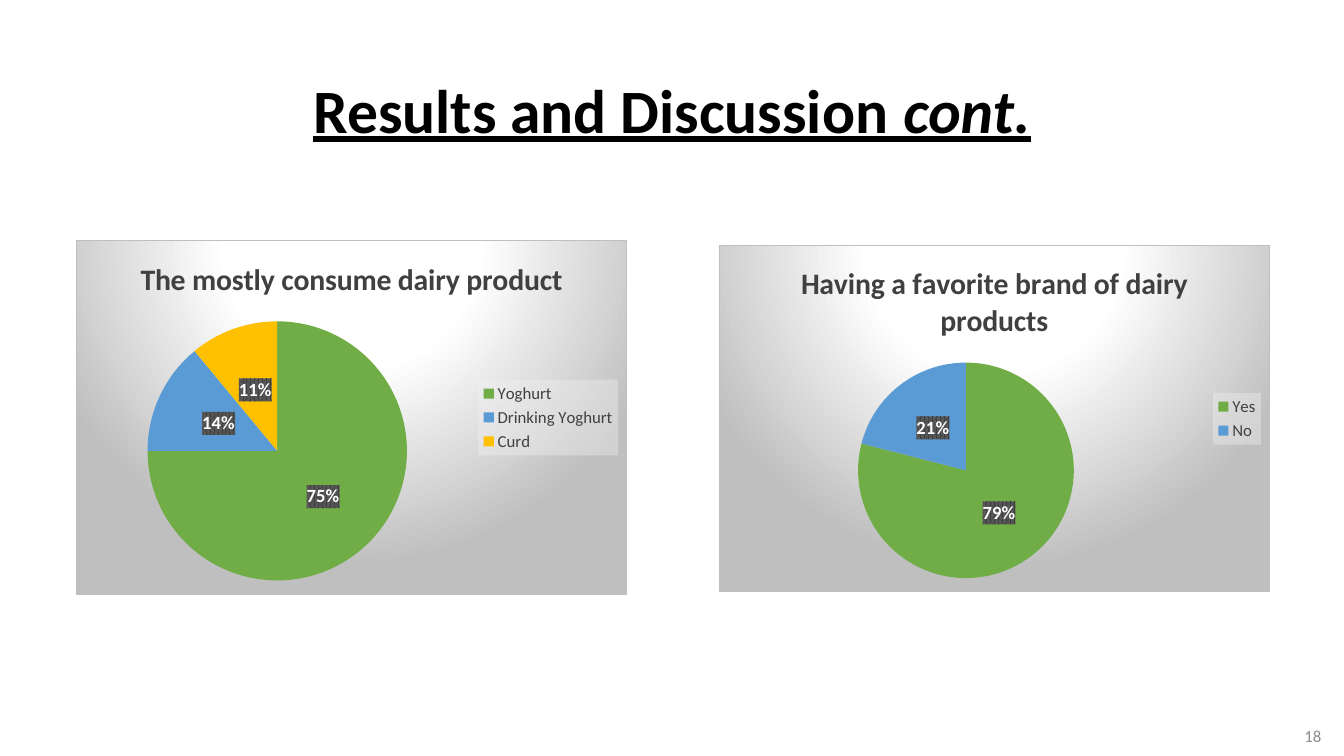
import pptx
import pptx.chart.data
import pptx.dml.color
import pptx.enum.chart
import pptx.enum.text
import pptx.oxml
import pptx.oxml.ns
import pptx.util

Cm = pptx.util.Cm
Pt = pptx.util.Pt
RGBColor = pptx.dml.color.RGBColor

HEADING = [("Results and Discussion ", False), ("cont.", True)]
PAGE_NUMBER = "18"
SURVEYS = [
    {
        "title": "The mostly consume dairy product",
        "answers": {"Yoghurt": 75, "Drinking Yoghurt": 14, "Curd": 11},
        "place": (1.91, 6.05, 13.89, 8.94),
    },
    {
        "title": "Having a favorite brand of dairy products",
        "answers": {"Yes": 79, "No": 21},
        "place": (18.11, 6.17, 13.89, 8.76),
    },
]

FONT = "Calibri"
BLACK = RGBColor(0x00, 0x00, 0x00)
WHITE = RGBColor(0xFF, 0xFF, 0xFF)
DARK_GRAY = RGBColor(0x40, 0x40, 0x40)
MID_GRAY = RGBColor(0x59, 0x59, 0x59)
PAGE_GRAY = RGBColor(0x8C, 0x8C, 0x8C)
EDGE_GRAY = RGBColor(0xBF, 0xBF, 0xBF)
PALE_GRAY = RGBColor(0xF2, 0xF2, 0xF2)
SLICE_COLORS = [
    RGBColor(0x70, 0xAD, 0x47),
    RGBColor(0x5B, 0x9B, 0xD5),
    RGBColor(0xFF, 0xC0, 0x00),
]

GRADIENT_STOPS = [(0, WHITE), (39000, WHITE), (100000, EDGE_GRAY)]
BACKDROP = (
    '<a:gradFill><a:gsLst>'
    + "".join(
        f'<a:gs pos="{position}"><a:srgbClr val="{color}"/></a:gs>'
        for position, color in GRADIENT_STOPS
    )
    + '</a:gsLst><a:path path="circle">'
    '<a:fillToRect l="50000" t="-80000" r="50000" b="180000"/></a:path></a:gradFill>'
    f'<a:ln w="9525"><a:solidFill><a:srgbClr val="{EDGE_GRAY}"/></a:solidFill></a:ln>'
)
LABEL_FILL = (
    f'<a:pattFill prst="pct75"><a:fgClr><a:srgbClr val="{DARK_GRAY}"/></a:fgClr>'
    f'<a:bgClr><a:srgbClr val="{MID_GRAY}"/></a:bgClr></a:pattFill>'
)
LEGEND_FILL = (
    f'<a:solidFill><a:srgbClr val="{PALE_GRAY}">'
    '<a:alpha val="39000"/></a:srgbClr></a:solidFill>'
)


def set_font(font, size, color, bold=None):
    font.name = FONT
    font.size = Pt(size)
    font.color.rgb = color
    font.bold = bold


def add_background(parent, content):
    properties = pptx.oxml.parse_xml(
        f'<c:spPr {pptx.oxml.ns.nsdecls("c", "a")}>{content}</c:spPr>'
    )
    parent.find(pptx.oxml.ns.qn("c:txPr")).addprevious(properties)


def add_heading(slide):
    title = slide.shapes.title
    title.left, title.top, title.width, title.height = map(Cm, (2.33, 1.01, 29.21, 3.68))
    title.text_frame.vertical_anchor = pptx.enum.text.MSO_ANCHOR.MIDDLE
    paragraph = title.text_frame.paragraphs[0]
    paragraph.alignment = pptx.enum.text.PP_ALIGN.CENTER
    paragraph.line_spacing = 0.9
    set_font(paragraph.font, 44, BLACK, True)
    paragraph.font.underline = True
    for text, italic in HEADING:
        run = paragraph.add_run()
        run.text = text
        run.font.underline = True
        if italic:
            run.font.italic = True


def add_page_number(slide):
    box = slide.shapes.add_textbox(*map(Cm, (25.93, 18.03, 7.62, 1.02)))
    frame = box.text_frame
    frame.word_wrap = True
    frame.vertical_anchor = pptx.enum.text.MSO_ANCHOR.MIDDLE
    paragraph = frame.paragraphs[0]
    paragraph.text = PAGE_NUMBER
    paragraph.alignment = pptx.enum.text.PP_ALIGN.RIGHT
    set_font(paragraph.font, 12, PAGE_GRAY)


def add_survey(slide, survey):
    answers = survey["answers"]
    data = pptx.chart.data.CategoryChartData()
    data.categories = list(answers)
    data.add_series("Series 1", list(answers.values()))
    chart = slide.shapes.add_chart(
        pptx.enum.chart.XL_CHART_TYPE.PIE, *map(Cm, survey["place"]), data
    ).chart
    set_font(chart.font, 10, BLACK)
    add_background(chart.element, BACKDROP)

    chart.has_title = True
    chart.chart_title.include_in_layout = False
    heading = chart.chart_title.text_frame.paragraphs[0]
    heading.text = survey["title"]
    set_font(heading.font, 21.3, DARK_GRAY, True)

    chart.has_legend = True
    legend = chart.legend
    legend.position = pptx.enum.chart.XL_LEGEND_POSITION.RIGHT
    legend.include_in_layout = False
    set_font(legend.font, 12, DARK_GRAY)
    add_background(legend.font_element if hasattr(legend, "font_element")
                   else chart.element.find(".//" + pptx.oxml.ns.qn("c:legend")), LEGEND_FILL)

    pie = chart.plots[0]
    pie.vary_by_categories = True
    series = pie.series[0]
    for index, color in enumerate(SLICE_COLORS[:len(answers)]):
        fill = series.points[index].format.fill
        fill.solid()
        fill.fore_color.rgb = color

    labels = series.data_labels
    labels.show_value = False
    labels.show_percentage = True
    labels.number_format = "0%"
    labels.number_format_is_linked = False
    labels.position = pptx.enum.chart.XL_LABEL_POSITION.CENTER
    set_font(labels.font, 13.3, WHITE, True)
    add_background(chart.element.find(".//" + pptx.oxml.ns.qn("c:dLbls")), LABEL_FILL)


def main():
    presentation = pptx.Presentation()
    presentation.slide_width = Cm(33.87)
    presentation.slide_height = Cm(19.05)
    slide = presentation.slides.add_slide(presentation.slide_layouts[5])
    add_heading(slide)
    add_page_number(slide)
    for survey in SURVEYS:
        add_survey(slide, survey)
    presentation.save("out.pptx")


if __name__ == "__main__":
    main()
